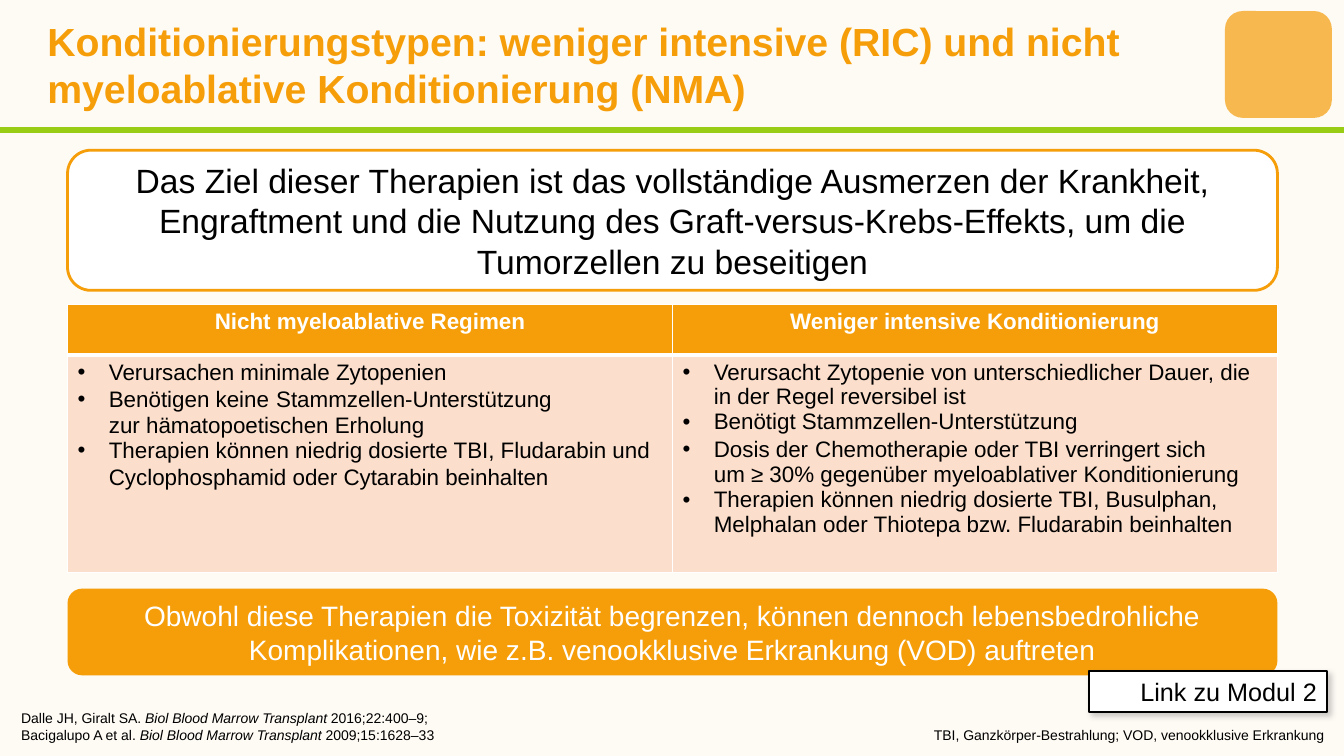
from copy import deepcopy

from lxml.etree import SubElement
from pptx import Presentation
from pptx.dml.color import RGBColor
from pptx.enum.shapes import MSO_CONNECTOR, MSO_SHAPE
from pptx.enum.text import MSO_ANCHOR, MSO_AUTO_SIZE, PP_ALIGN
from pptx.oxml.ns import qn
from pptx.util import Inches, Pt

ORANGE, PEACH, GREEN = "F59E09", "FBDFCC", "99CC14"
WHITE, BLACK, CREAM = "FFFFFF", "000000", "FEFAF4"
CONTENT_LEFT, CONTENT_WIDTH = 0.67, 12


def color(hex_value):
    return RGBColor.from_string(hex_value)


def add_xml(parent, tag, **attributes):
    return SubElement(parent, qn(tag), {key: str(value) for key, value in attributes.items()})


class SlideBuilder:
    """Holds the text style and the slide being built."""

    def __init__(self, slide, font_name):
        self.slide = slide
        self.font_name = font_name

    def format_font(self, font, **format_values):
        values = {"name": self.font_name, "bold": False, **format_values}
        font.color.rgb = color(values.pop("color", BLACK))
        values["size"] = Pt(values["size"])
        for name, value in values.items():
            setattr(font, name, value)

    def fill_paragraph(self, paragraph, runs, align=PP_ALIGN.LEFT, bullet=None, **style):
        """Fill a paragraph with runs: plain strings or (text, format) pairs."""
        paragraph.alignment = align
        paragraph.space_before = Pt(0)
        properties = paragraph._p.get_or_add_pPr()
        indent = Inches(0.31) if bullet else 0
        properties.set("marL", str(indent))
        properties.set("indent", str(-indent))
        if bullet:
            add_xml(properties, "a:buFont", typeface=self.font_name)
            add_xml(properties, "a:buChar", char=bullet)
        else:
            add_xml(properties, "a:buNone")
        for item in runs:
            text, changes = (item, {}) if isinstance(item, str) else item
            for number, line in enumerate(text.split("\n")):
                if number:
                    paragraph.add_line_break()
                    paragraph._p[-1].append(deepcopy(run.font._element))
                run = paragraph.add_run()
                run.text = line
                self.format_font(run.font, **{**style, **changes})

    def fill_frame(self, text_frame, paragraphs, **style):
        for number, runs in enumerate(paragraphs):
            paragraph = text_frame.add_paragraph() if number else text_frame.paragraphs[0]
            self.fill_paragraph(paragraph, runs, **style)

    def placeholder(self, shape, box, paragraphs, anchor, **style):
        shape.left, shape.top, shape.width, shape.height = map(Inches, box)
        frame = shape.text_frame
        settings = {"word_wrap": True, "auto_size": MSO_AUTO_SIZE.NONE, "vertical_anchor": anchor}
        for name, value in settings.items():
            setattr(frame, name, value)
        self.fill_frame(frame, paragraphs, **style)

    def box(self, kind, box, fill, line=None, line_width=0, text=None, **style):
        shape = self.slide.shapes.add_shape(kind, *map(Inches, box))
        shape.shadow.inherit = False
        shape.fill.solid()
        shape.fill.fore_color.rgb = color(fill)
        if line:
            shape.line.color.rgb = color(line)
            shape.line.width = Pt(line_width)
        else:
            shape.line.fill.background()
        if text:
            shape.text_frame.word_wrap = True
            shape.text_frame.vertical_anchor = MSO_ANCHOR.MIDDLE
            self.fill_frame(shape.text_frame, [[text]], **style)
        return shape

    def rule(self, start, end, line_color, width):
        connector = self.slide.shapes.add_connector(
            MSO_CONNECTOR.STRAIGHT, *map(Inches, start + end))
        connector.line.color.rgb = color(line_color)
        connector.line.width = Pt(width)
        add_xml(connector._element.spPr, "a:effectLst")

    def cell(self, cell, paragraphs, fill, borders, **style):
        properties = cell._tc.get_or_add_tcPr()
        for side, width in borders.items():
            line = add_xml(properties, f"a:{side}", w=Pt(width))
            add_xml(add_xml(line, "a:solidFill"), "a:srgbClr", val=WHITE)
        cell.fill.solid()
        cell.fill.fore_color.rgb = color(fill)
        self.fill_frame(cell.text_frame, paragraphs, size=16, **style)

    def table(self, box, row_heights, headers, columns):
        table = self.slide.shapes.add_table(2, len(headers), *map(Inches, box)).table
        for row, height in zip(table.rows, row_heights):
            row.height = Inches(height)
        thin = dict.fromkeys(("lnL", "lnR", "lnT", "lnB"), 1)
        for index, (header, bullets) in enumerate(zip(headers, columns)):
            self.cell(table.cell(0, index), [[header]], ORANGE, {**thin, "lnB": 3},
                      align=PP_ALIGN.CENTER, color=WHITE, bold=True)
            self.cell(table.cell(1, index), bullets, PEACH, {**thin, "lnT": 3}, bullet="•")


def main():
    presentation = Presentation()
    presentation.slide_width, presentation.slide_height = Inches(13.33), Inches(7.5)
    slide = presentation.slides.add_slide(presentation.slide_layouts[3])
    slide.background.fill.solid()
    slide.background.fill.fore_color.rgb = color(CREAM)
    builder = SlideBuilder(slide, "Arial")
    title, references, abbreviations = slide.placeholders

    # Header
    badge = builder.box(MSO_SHAPE.ROUNDED_RECTANGLE, (12.15, 0.11, 1.06, 1.06), ORANGE)
    badge_color = badge._element.spPr.find(qn("a:solidFill"))[0]
    add_xml(badge_color, "a:alpha", val=70000)
    builder.rule((0, 1.29), (13.33, 1.29), GREEN, 4.5)
    builder.placeholder(
        title, (0.37, 0.09, 11.78, 1.1),
        [["Konditionierungstypen: weniger intensive (RIC) und nicht "
          "myeloablative Konditionierung (NMA)"]],
        MSO_ANCHOR.MIDDLE, size=28, color=ORANGE, bold=True)

    # References and abbreviations
    journal = ("Biol Blood Marrow Transplant ", {"italic": True})
    builder.placeholder(
        references, (0.11, 7.1, 7.98, 0.32),
        [["Dalle JH, Giralt SA. ", journal, "2016;22:400–9;\nBacigalupo A et al. ",
          journal, "2009;15:1628–33"]],
        MSO_ANCHOR.BOTTOM, size=10)
    builder.placeholder(
        abbreviations, (5.25, 7.1, 7.98, 0.32),
        [["TBI, Ganzkörper-Bestrahlung; VOD, venookklusive Erkrankung"]],
        MSO_ANCHOR.BOTTOM, size=10, align=PP_ALIGN.RIGHT)

    # Comparison table
    wide_space = (" ", {"size": 18})
    builder.table(
        (CONTENT_LEFT, 3.02, CONTENT_WIDTH, 2.66), (0.5, 2.16),
        ("Nicht myeloablative Regimen", "Weniger intensive Konditionierung"),
        ([["Verursachen minimale Zytopenien"],
          ["Benötigen keine", wide_space,
           "Stammzellen-Unterstützung\nzur hämatopoetischen Erholung"],
          ["Therapien können niedrig dosierte TBI, Fludarabin und "
           "Cyclophosphamid oder Cytarabin beinhalten", wide_space]],
         [["Verursacht Zytopenie von unterschiedlicher Dauer, die in der Regel reversibel ist"],
          ["Benötigt Stammzellen-Unterstützung"],
          ["Dosis der", wide_space, "Chemotherapie oder TBI verringert sich\n"
           "um ≥ 30% gegenüber myeloablativer Konditionierung"],
          ["Therapien können niedrig dosierte TBI, Busulphan, "
           "Melphalan oder Thiotepa bzw. Fludarabin beinhalten"]]))

    # Conclusion and goal
    builder.box(
        MSO_SHAPE.ROUNDED_RECTANGLE, (CONTENT_LEFT, 5.84, CONTENT_WIDTH, 0.86), ORANGE,
        text="Obwohl diese Therapien die Toxizität begrenzen, können dennoch lebensbedrohliche "
             "Komplikationen, wie z.B. venookklusive Erkrankung (VOD) auftreten",
        size=20, color=WHITE, align=PP_ALIGN.CENTER)
    builder.box(
        MSO_SHAPE.ROUNDED_RECTANGLE, (CONTENT_LEFT, 1.49, CONTENT_WIDTH, 1.39), WHITE, ORANGE, 2,
        text="Das Ziel dieser Therapien ist das vollständige Ausmerzen der Krankheit, "
             "Engraftment und die Nutzung des Graft-versus-Krebs-Effekts, um die "
             "Tumorzellen zu beseitigen",
        size=24, align=PP_ALIGN.CENTER)

    # Module label with shadow
    label = builder.box(MSO_SHAPE.RECTANGLE, (10.8, 6.66, 2.36, 0.4), WHITE, BLACK, 1.5,
                        text="Link zu Modul 2", size=18, align=PP_ALIGN.RIGHT)
    effects = label._element.spPr.find(qn("a:effectLst"))
    shadow = add_xml(effects, "a:outerShdw", blurRad=Pt(4), dist=Pt(3), dir=45 * 60000)
    add_xml(add_xml(shadow, "a:srgbClr", val="808080"), "a:alpha", val=40000)

    presentation.save("out.pptx")


if __name__ == "__main__":
    main()
